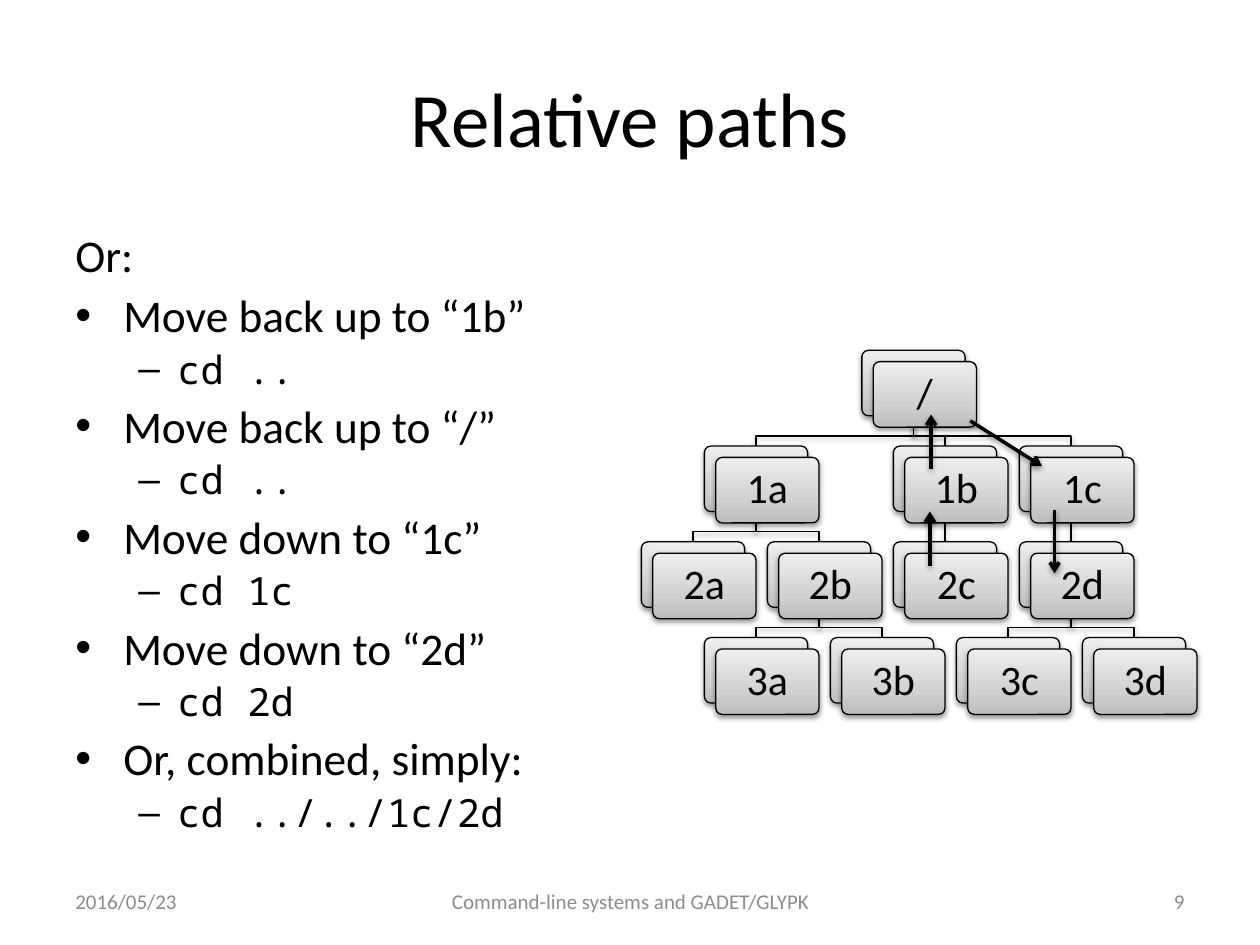
from lxml import etree
from pptx import Presentation
from pptx import util as u
from pptx.dml.color import RGBColor
from pptx.enum import shapes, text
from pptx.oxml.ns import qn

BLACK = RGBColor(0x00, 0x00, 0x00)
GREY = RGBColor(0x8C, 0x8C, 0x8C)
CARD_STOPS = ((0, RGBColor(0xBD, 0xBD, 0xBD)), (35, RGBColor(0xD1, 0xD1, 0xD1)),
              (100, RGBColor(0xEE, 0xEE, 0xEE)))
SANS, MONO = "Calibri", "Noto Sans Mono"
LEFT, CENTER, RIGHT = text.PP_ALIGN.LEFT, text.PP_ALIGN.CENTER, text.PP_ALIGN.RIGHT

# Tree grid: column step is half the distance between neighbouring cards
GRID_X, GRID_Y, COL, ROW = 5.09, 2.78, 0.5, 0.76
CARD_W, CARD_H, OFFSET, BEND = 0.82, 0.52, 0.09, 0.16

# Directory name: (column, row, parent)
TREE = {
    "/": (3.5, 0, None),
    "1a": (1, 1, "/"), "2a": (0, 2, "1a"), "2b": (2, 2, "1a"),
    "3a": (1, 3, "2b"), "3b": (3, 3, "2b"),
    "1b": (4, 1, "/"), "2c": (4, 2, "1b"),
    "1c": (6, 1, "/"), "2d": (6, 2, "1c"),
    "3c": (5, 3, "2d"), "3d": (7, 3, "2d"),
}
MOVES = ((7.38, 4.49, 7.38, 4.06), (7.39, 3.72, 7.39, 3.29),
         (7.7, 3.34, 8.27, 3.7), (8.37, 4.05, 8.37, 4.55))
STEPS = (("Move back up to “1b”", "cd .."), ("Move back up to “/”", "cd .."),
         ("Move down to “1c”", "cd 1c"), ("Move down to “2d”", "cd 2d"),
         ("Or, combined, simply:", "cd ../../1c/2d"))


def add_span(para, words, size, font=SANS, color=BLACK):
    span = para.add_run()
    span.text = words
    span.font.size, span.font.name = u.Pt(size), font
    span.font.color.rgb = color


def add_box(page, left, top, width, height, anchor=text.MSO_ANCHOR.MIDDLE):
    box = page.shapes.add_textbox(*map(u.Inches, (left, top, width, height)))
    box.text_frame.word_wrap = True
    box.text_frame.vertical_anchor = anchor
    return box.text_frame


def add_label(page, place, words, size, align, color=BLACK):
    para = add_box(page, *place).paragraphs[0]
    para.alignment = align
    add_span(para, words, size, color=color)


def set_bullet(para, mark, margin, hang):
    props = para._p.get_or_add_pPr()
    props.set("marL", str(u.Inches(margin)))
    props.set("indent", str(-u.Inches(hang)))
    etree.SubElement(props, qn("a:buFont"), typeface="Arial")
    etree.SubElement(props, qn("a:buChar"), char=mark)


def add_steps(page):
    frame = add_box(page, 0.5, 1.75, 4.42, 4.95, text.MSO_ANCHOR.TOP)
    intro = frame.paragraphs[0]
    intro.space_before = u.Pt(3.5)
    add_span(intro, "Or:", 25.9)
    for action, command in STEPS:
        para = frame.add_paragraph()
        set_bullet(para, "•", 0.38, 0.38)
        para.space_before = u.Pt(3.5)
        add_span(para, action, 25.9)
        para = frame.add_paragraph()
        para.level = 1
        set_bullet(para, "–", 0.81, 0.31)
        para.space_before = u.Pt(2.1)
        add_span(para, command, 22.2, MONO)


def style_line(item, width):
    """Black line with a soft shadow below it."""
    item.line.color.rgb = BLACK
    item.line.width = u.Pt(width)
    effects = etree.SubElement(item._element.spPr, qn("a:effectLst"))
    shadow = etree.SubElement(effects, qn("a:outerShdw"), blurRad=str(u.Pt(3.1)),
                              dist=str(u.Pt(1.6)), dir="5400000", rotWithShape="0")
    color = etree.SubElement(shadow, qn("a:srgbClr"), val=str(BLACK))
    etree.SubElement(color, qn("a:alpha"), val="38000")


def fill_gradient(shape):
    shape.fill.gradient()
    shape.fill.gradient_angle = 90
    stops = shape._element.spPr.find(".//" + qn("a:gsLst"))
    for stop in list(stops):
        stops.remove(stop)
    for share, color in CARD_STOPS:
        stop = etree.SubElement(stops, qn("a:gs"), pos=str(share * 1000))
        etree.SubElement(stop, qn("a:srgbClr"), val=str(color))


def card_corner(name):
    column, row, _ = TREE[name]
    return GRID_X + column * COL, GRID_Y + row * ROW


def add_line(page, ends, width):
    line = page.shapes.add_connector(shapes.MSO_CONNECTOR.STRAIGHT, *map(u.Inches, ends))
    style_line(line, width)
    return line


def add_branch(page, parent, child):
    """Return the connector if the branch is straight, else draw a bent outline."""
    (x1, y1), (x2, y2) = card_corner(parent), card_corner(child)
    x1, x2, y1 = x1 + CARD_W / 2, x2 + CARD_W / 2, y1 + CARD_H
    if x1 == x2:
        return add_line(page, (x1, y1, x2, y2), 0.75)
    points = [(u.Inches(x), u.Inches(y)) for x, y in
              ((x1, y1), (x1, y1 + BEND), (x2, y1 + BEND), (x2, y2))]
    builder = page.shapes.build_freeform(*points[0])
    builder.add_line_segments(points[1:], close=False)
    branch = builder.convert_to_shape()
    branch.fill.background()
    style_line(branch, 0.75)
    return None


def add_card(page, left, top):
    card = page.shapes.add_shape(shapes.MSO_SHAPE.ROUNDED_RECTANGLE,
                                 *map(u.Inches, (left, top, CARD_W, CARD_H)))
    card.adjustments[0] = 0.1
    fill_gradient(card)
    style_line(card, 0.75)
    return card


def add_directory(page, name):
    left, top = card_corner(name)
    back = add_card(page, left, top)
    front = add_card(page, left + OFFSET, top + OFFSET)
    frame = front.text_frame
    frame.margin_left = frame.margin_right = u.Inches(0.1)
    frame.margin_top = frame.margin_bottom = 0
    frame.vertical_anchor = text.MSO_ANCHOR.MIDDLE
    para = frame.paragraphs[0]
    para.alignment, para.line_spacing = CENTER, 0.9
    add_span(para, name, 24)
    return back


def add_tree(page):
    # Branches lie behind the cards, so they are joined once the cards exist
    branches = {(parent, child): add_branch(page, parent, child)
                for child, (_, _, parent) in TREE.items() if parent}
    cards = {name: add_directory(page, name) for name in TREE}
    for (parent, child), line in branches.items():
        if line is not None:
            line.begin_connect(cards[parent], 2)
            line.end_connect(cards[child], 0)


def add_move(page, ends):
    arrow = add_line(page, ends, 2)
    etree.SubElement(arrow.line._get_or_add_ln(), qn("a:tailEnd"), type="arrow")


def main():
    deck = Presentation()
    deck.slide_width, deck.slide_height = u.Inches(10), u.Inches(7.5)
    page = deck.slides.add_slide(deck.slide_layouts[6])

    # Title and steps
    add_label(page, (0.5, 0.3, 9, 1.25), "Relative paths", 44, CENTER)
    add_steps(page)

    # Directory tree with the moves through it
    add_tree(page)
    for ends in MOVES:
        add_move(page, ends)

    # Footer
    for left, width, words, align in (
            (0.5, 2.33, "2016/05/23", LEFT),
            (3.42, 3.17, "Command-line systems and GADET/GLYPK", CENTER),
            (7.17, 2.33, "9", RIGHT)):
        add_label(page, (left, 6.95, width, 0.4), words, 12, align, GREY)

    deck.save("out.pptx")


if __name__ == "__main__":
    main()
